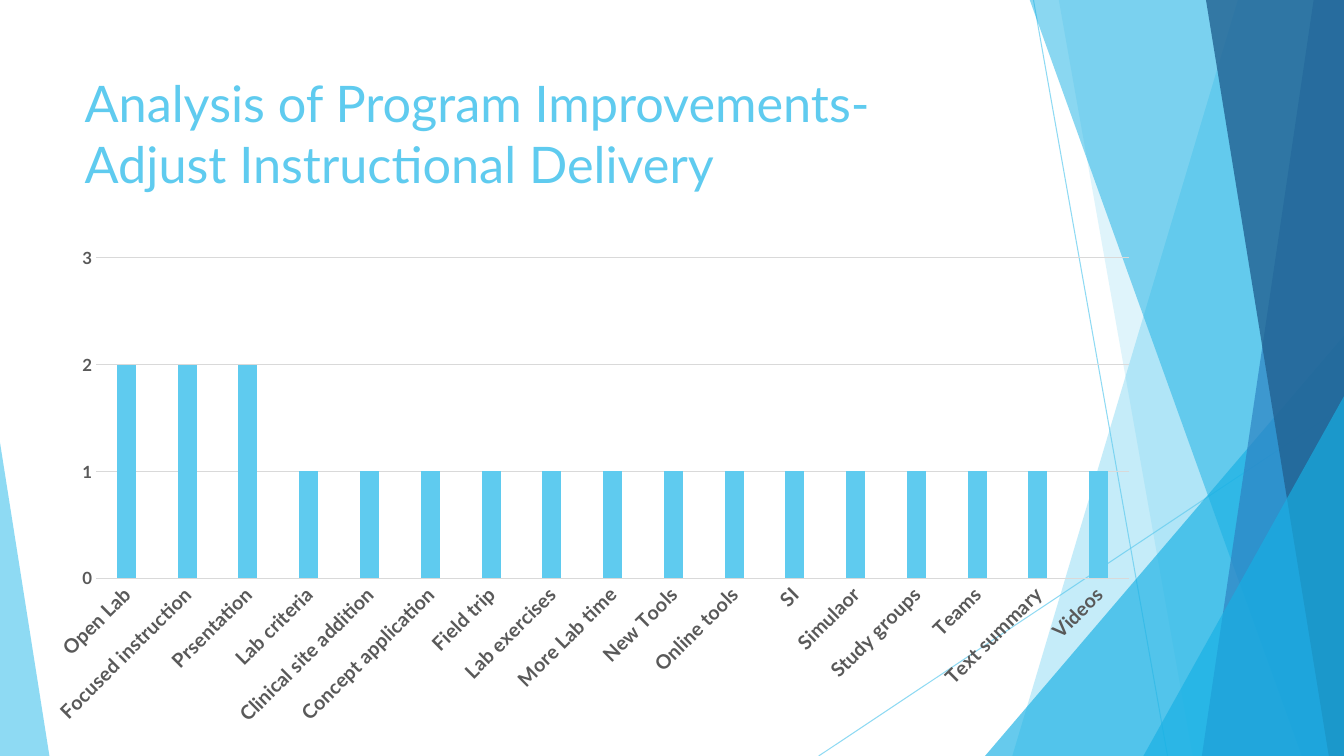
from lxml import etree
from pptx import Presentation
from pptx.chart.data import CategoryChartData
from pptx.dml.color import RGBColor
from pptx.enum.chart import XL_CHART_TYPE, XL_TICK_MARK
from pptx.enum.shapes import MSO_CONNECTOR, MSO_SHAPE
from pptx.enum.text import MSO_ANCHOR, MSO_AUTO_SIZE, PP_ALIGN
from pptx.oxml.ns import qn
from pptx.util import Inches, Pt

COLUMN = XL_CHART_TYPE.COLUMN_CLUSTERED
NO_TICK = XL_TICK_MARK.NONE
STRAIGHT = MSO_CONNECTOR.STRAIGHT
TRIANGLE = MSO_SHAPE.ISOSCELES_TRIANGLE
TOP, LEFT, NO_FIT = MSO_ANCHOR.TOP, PP_ALIGN.LEFT, MSO_AUTO_SIZE.NONE

FONT = "Lato"
WIDTH, HEIGHT = 13.33, 7.5
COLORS = {
    "sky": "5FCBEF", "cyan": "17B0E4", "blue": "2E83C3", "navy": "226292",
    "text": "595959", "grid": "D9D9D9",
}

DOUBLE = ["Open Lab", "Focused instruction", "Prsentation"]
SINGLE = ["Lab criteria", "Clinical site addition", "Concept application",
          "Field trip", "Lab exercises", "More Lab time", "New Tools",
          "Online tools", "SI", "Simulaor", "Study groups", "Teams",
          "Text summary", "Videos"]


def rgb(name):
    return RGBColor.from_string(COLORS[name])


def set_fill(fill, color, opacity):
    fill.solid()
    fill.fore_color.rgb = rgb(color)


def set_alpha(shape, opacity):
    clr = next(shape.element.spPr.iter(qn("a:srgbClr")))
    etree.SubElement(clr, qn("a:alpha")).set("val", str(opacity * 1000))


def paint(shape, color, opacity):
    shape.shadow.inherit = False
    set_fill(shape.fill, color, opacity)
    set_alpha(shape, opacity)
    shape.line.fill.background()


def add_line(s, x1, y1, x2, y2):
    line = s.shapes.add_connector(STRAIGHT, Inches(x1), Inches(y1),
                                  Inches(x2), Inches(y2))
    line.line.color.rgb = rgb("sky")
    line.line.width = Pt(0.75)
    set_alpha(line, 70)
    etree.SubElement(line.element.spPr, qn("a:effectLst"))


def add_band(s, top_x, bottom_x, right, bottom, color, opacity):
    """Slanted left edge, running out to the right edge of the slide."""
    top = -0.01
    fb = s.shapes.build_freeform(Inches(top_x), Inches(top))
    corners = [(right, top), (right, bottom), (bottom_x, bottom)]
    fb.add_line_segments([(Inches(x), Inches(y)) for x, y in corners])
    paint(fb.convert_to_shape(), color, opacity)


def add_corner(s, x, y, w, h, apex, color, opacity):
    tri = s.shapes.add_shape(TRIANGLE, Inches(x), Inches(y),
                             Inches(w), Inches(h))
    tri.adjustments[0] = apex
    paint(tri, color, opacity)


def add_facets(s, right, bottom):
    # Thin lines
    add_line(s, 10.25, 0, 11.58, bottom)
    add_line(s, right, 4.03, 8.12, bottom)
    # Bands and corner triangles, back to front
    add_band(s, 12.28, 10.04, right, bottom, "sky", 36)
    add_band(s, 10.5, 11.83, right, bottom, "sky", 20)
    add_corner(s, right - 3.56, bottom - 4.17, 3.56, 4.17, 1, "cyan", 66)
    add_band(s, 10.21, 12.91, right, bottom, "cyan", 50)
    add_band(s, 13.03, 11.92, right, bottom, "blue", 70)
    add_band(s, 11.96, 13.18, right, bottom, "navy", 80)
    add_corner(s, right - 1.99, bottom - 3.57, 1.99, 3.57, 1, "cyan", 66)
    add_corner(s, 0, bottom - 3.11, 0.49, 3.11, 0, "sky", 70)


def add_title(s, x, y, w, h):
    title = s.shapes.title
    s.shapes.element.append(title.element)  # in front of the facets
    title.left, title.top = Inches(x), Inches(y)
    title.width, title.height = Inches(w), Inches(h)
    tf = title.text_frame
    tf.word_wrap, tf.auto_size, tf.vertical_anchor = True, NO_FIT, TOP
    p = tf.paragraphs[0]
    p.alignment = LEFT
    r = p.add_run()
    r.text = "Analysis of Program Improvements- Adjust Instructional Delivery"
    r.font.size, r.font.name = Pt(36), FONT
    r.font.color.rgb = rgb("sky")


def style_axis(axis, size):
    axis.major_tick_mark = axis.minor_tick_mark = NO_TICK
    font = axis.tick_labels.font
    font.size, font.bold, font.name = Pt(size), True, FONT
    font.color.rgb = rgb("text")


def style_rule(line):
    line.color.rgb = rgb("grid")
    line.width = Pt(0.75)


def add_column_chart(s, x, y, w, h):
    data = CategoryChartData()
    data.categories = DOUBLE + SINGLE
    data.add_series("Series 1", [2] * len(DOUBLE) + [1] * len(SINGLE))
    chart = s.shapes.add_chart(COLUMN, Inches(x), Inches(y),
                               Inches(w), Inches(h), data).chart
    chart.has_legend = chart.has_title = False
    chart.font.size, chart.font.bold, chart.font.name = Pt(12), True, FONT

    # Columns
    plot = chart.plots[0]
    plot.gap_width, plot.overlap = 219, -27
    plot.vary_by_categories = False
    set_fill(plot.series[0].format.fill, "sky", 100)

    # Category axis with slanted labels
    cat = chart.category_axis
    style_axis(cat, 14)
    style_rule(cat.format.line)
    body = cat._element.find(qn("c:txPr")).find(qn("a:bodyPr"))
    body.set("rot", "-2700000")
    body.set("vert", "horz")

    # Value axis
    val = chart.value_axis
    style_axis(val, 12)
    val.format.line.fill.background()
    val.minimum_scale, val.maximum_scale, val.major_unit = 0, 3, 1
    val.has_major_gridlines = True
    style_rule(val.major_gridlines.format.line)


def main():
    prs = Presentation()
    prs.slide_width, prs.slide_height = Inches(WIDTH), Inches(HEIGHT)
    s = prs.slides.add_slide(prs.slide_layouts[5])
    add_facets(s, WIDTH, HEIGHT)
    add_title(s, 0.74, 0.67, 9.4, 1.44)
    add_column_chart(s, 0.32, 2.36, 11.1, 4.94)
    prs.save("out.pptx")


if __name__ == "__main__":
    main()
